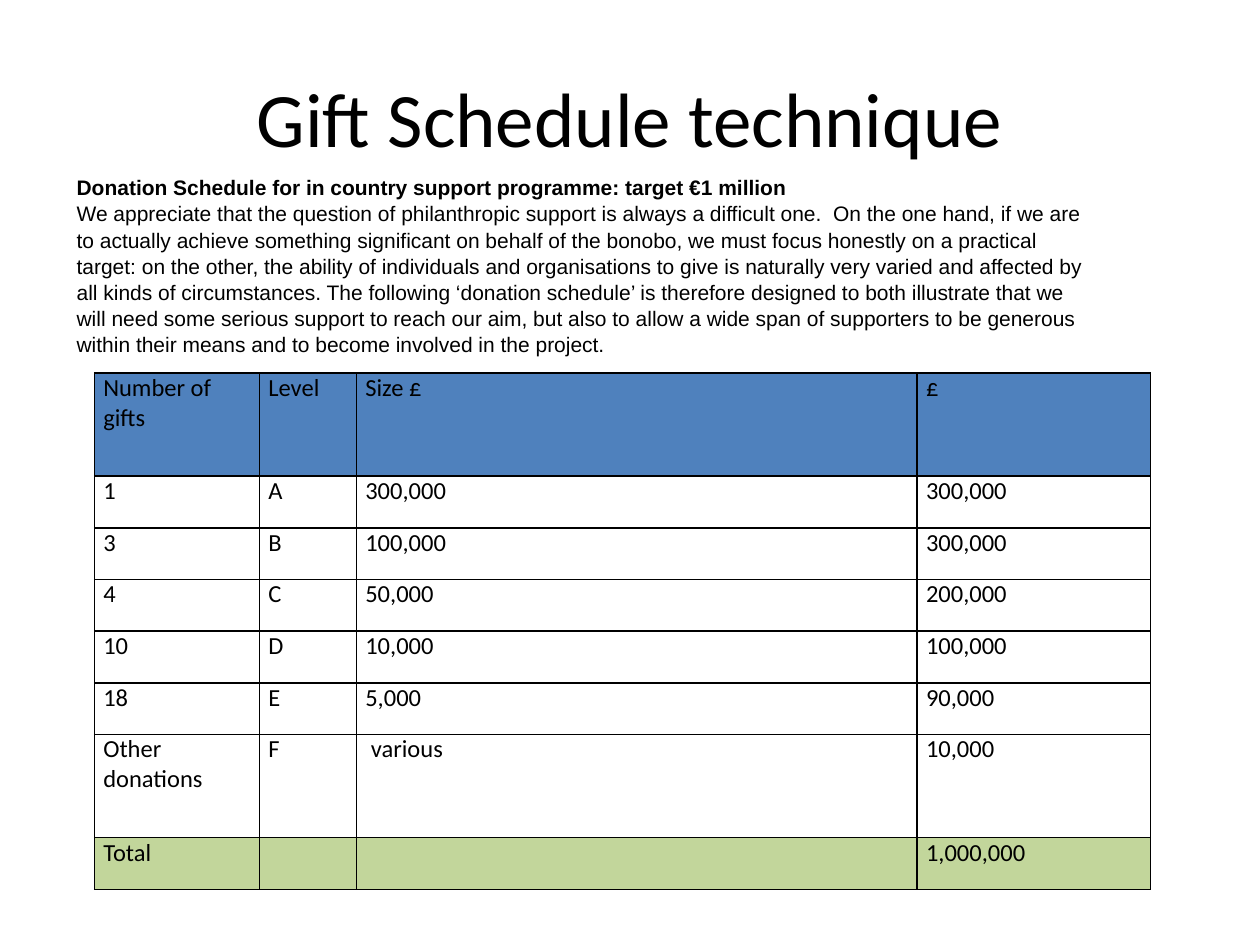
from pptx import Presentation
from pptx.dml.color import RGBColor
from pptx.enum.text import MSO_ANCHOR as Anchor, PP_ALIGN as Align
from pptx.oxml import parse_xml
from pptx.oxml.ns import nsdecls
from pptx.util import Inches, Pt

TITLE = "Gift Schedule technique"
HEADING = "Donation Schedule for in country support programme: target €1 million"
INTRO = (
    "We appreciate that the question of philanthropic support is always a difficult one.  "
    "On the one hand, if we are to actually achieve something significant on behalf of the "
    "bonobo, we must focus honestly on a practical target: on the other, the ability of "
    "individuals and organisations to give is naturally very varied and affected by all kinds "
    "of circumstances. The following ‘donation schedule’ is therefore designed to both "
    "illustrate that we will need some serious support to reach our aim, but also to allow a "
    "wide span of supporters to be generous within their means and to become involved in the "
    "project."
)
GIFTS = [
    ("Number of gifts", "Level", "Size £", "£"),
    ("1", "A", "300,000", "300,000"),
    ("3", "B", "100,000", "300,000"),
    ("4", "C", "50,000", "200,000"),
    ("10", "D", "10,000", "100,000"),
    ("18", "E", "5,000", "90,000"),
    ("Other donations", "F", " various", "10,000"),
    ("Total", "", "", "1,000,000"),
]
COL_WIDTHS = [1.31, 0.77, 4.45, 1.85]
ROW_HEIGHT = 0.41
TALL_ROWS = {0, 6}
ROW_FILLS = {0: "4F81BD", len(GIFTS) - 1: "C2D69B"}
BLACK = "000000"


def rgb(value):
    """Turn a hex string into a colour."""
    return RGBColor.from_string(value)


def write(p, text, font="Calibri", size=14, bold=False, align=Align.LEFT, spacing=None):
    """Put one formatted run into a paragraph."""
    p.alignment = align
    if spacing:
        p.line_spacing = spacing
    r = p.add_run()
    r.text = text
    r.font.name, r.font.size, r.font.bold = font, Pt(size), bold
    r.font.color.rgb = rgb(BLACK)


def add_text(s, box, anchor):
    """Add a wrapping text box and return its text frame."""
    tf = s.shapes.add_textbox(*map(Inches, box)).text_frame
    tf.word_wrap = True
    tf.vertical_anchor = anchor
    return tf


def add_borders(cell):
    """Draw a thin black line on each side of a cell."""
    tc_pr = cell._tc.get_or_add_tcPr()
    for i, side in enumerate(("lnL", "lnR", "lnT", "lnB")):
        tc_pr.insert(i, parse_xml(
            f'<a:{side} {nsdecls("a")} w="{Pt(1)}"><a:solidFill>'
            f'<a:srgbClr val="{BLACK}"/></a:solidFill></a:{side}>'))


def add_gift_table(s, left, top):
    """Add the gift schedule with its header and total rows filled."""
    heights = [ROW_HEIGHT * (2 if i in TALL_ROWS else 1) for i in range(len(GIFTS))]
    size = sum(COL_WIDTHS), sum(heights)
    table = s.shapes.add_table(len(GIFTS), len(COL_WIDTHS),
                               *map(Inches, (left, top, *size))).table
    for col, width in zip(table.columns, COL_WIDTHS):
        col.width = Inches(width)
    for i, (row, values) in enumerate(zip(table.rows, GIFTS)):
        row.height = Inches(heights[i])
        for cell, value in zip(row.cells, values):
            cell.margin_left = cell.margin_right = Inches(0.07)
            cell.margin_top = cell.margin_bottom = 0
            if i in ROW_FILLS:
                cell.fill.solid()
                cell.fill.fore_color.rgb = rgb(ROW_FILLS[i])
            else:
                cell.fill.background()
            add_borders(cell)
            if value:
                write(cell.text_frame.paragraphs[0], value)


def main():
    """Build the slide and save it."""
    prs = Presentation()
    prs.slide_width, prs.slide_height = Inches(10), Inches(7.5)
    s = prs.slides.add_slide(prs.slide_layouts[6])
    tf = add_text(s, (0.5, 0.3, 9, 1.25), Anchor.MIDDLE)
    write(tf.paragraphs[0], TITLE, size=44, align=Align.CENTER)
    add_gift_table(s, 0.75, 2.96)
    tf = add_text(s, (0.51, 1.33, 8.31, 1.82), Anchor.TOP)
    write(tf.paragraphs[0], HEADING, font="Arial", size=12, bold=True, spacing=1.04)
    write(tf.add_paragraph(), INTRO, font="Arial", size=12, spacing=1.04)
    prs.save("out.pptx")


if __name__ == "__main__":
    main()
